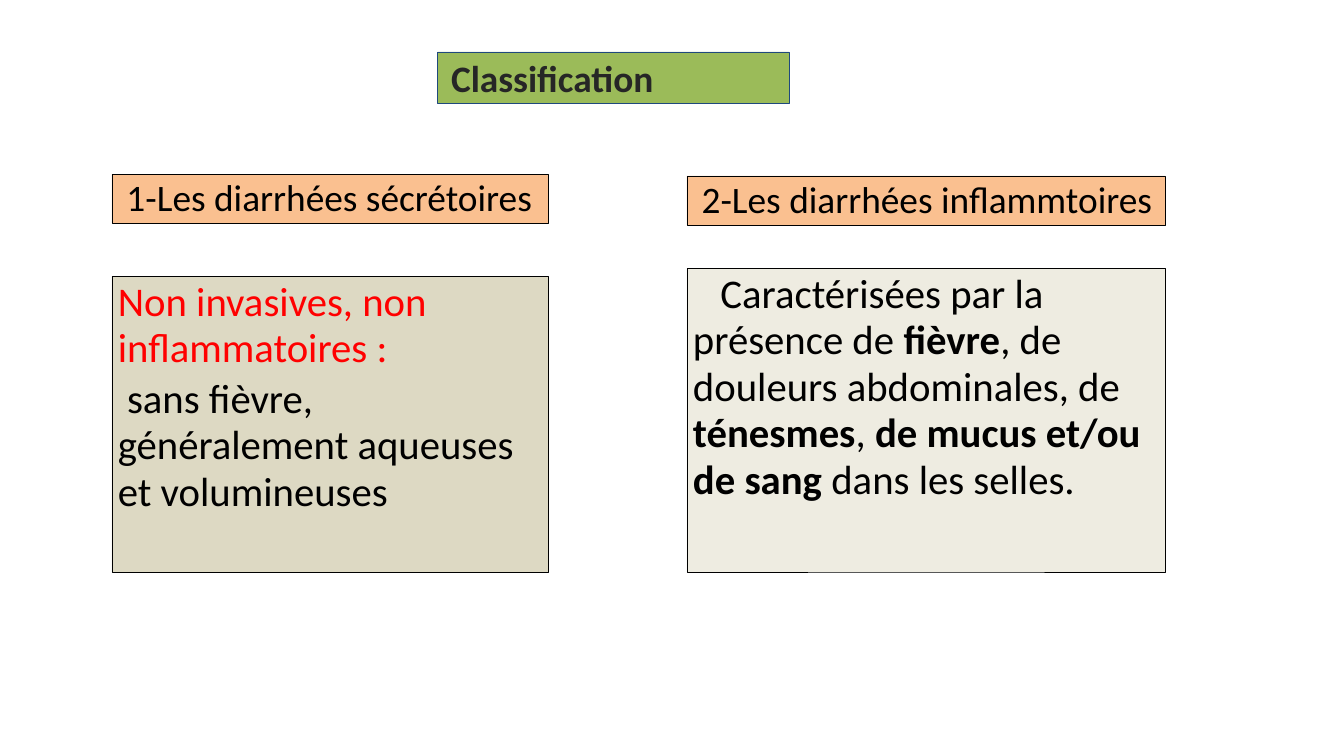
import dataclasses

import pptx
import pptx.dml.color
import pptx.enum.shapes
import pptx.enum.text
import pptx.util

Inches = pptx.util.Inches
Pt = pptx.util.Pt


@dataclasses.dataclass(frozen=True)
class Theme:
    font: str = "Calibri"
    heading_size: int = 44
    body_size: int = 48
    line_width: float = 0.75
    line_spacing: float = 0.95
    paragraph_gap: int = 5
    text: str = "000000"
    alert: str = "FF0000"
    title_text: str = "262626"
    title_fill: str = "9BBB59"
    title_line: str = "1F497D"
    heading_fill: str = "FAC090"
    secretory_fill: str = "DDD9C3"
    inflammatory_fill: str = "EEECE1"


THEME = Theme()


def rgb(value):
    return pptx.dml.color.RGBColor.from_string(value)


def style_box(box, fill, line, inset=0.1):
    """Fill and outline a box, and anchor its text at the top left."""
    box.fill.solid()
    box.fill.fore_color.rgb = rgb(fill)
    box.line.color.rgb = rgb(line)
    box.line.width = Pt(THEME.line_width)
    frame = box.text_frame
    frame.auto_size = pptx.enum.text.MSO_AUTO_SIZE.NONE
    frame.vertical_anchor = pptx.enum.text.MSO_ANCHOR.TOP
    frame.margin_left = Inches(inset)
    frame.margin_right = Inches(0.1)
    frame.margin_top = frame.margin_bottom = Inches(0.05)


def style_run(run, size, color=THEME.text, bold=False):
    run.font.name = THEME.font
    run.font.size = Pt(size)
    run.font.color.rgb = rgb(color)
    run.font.bold = bold


def style_paragraph(paragraph, indent=0):
    paragraph.alignment = pptx.enum.text.PP_ALIGN.LEFT
    paragraph.line_spacing = THEME.line_spacing
    if indent:
        paragraph._p.get_or_add_pPr().set("indent", str(Inches(indent)))


def add_box(slide, left, top, width, height, fill, inset=0.1):
    box = slide.shapes.add_shape(
        pptx.enum.shapes.MSO_SHAPE.RECTANGLE,
        Inches(left), Inches(top), Inches(width), Inches(height))
    box.shadow.inherit = False
    style_box(box, fill, THEME.text, inset)
    return box.text_frame


def set_title(slide, text):
    title = slide.shapes.title
    title.left, title.top = Inches(7.16), Inches(0.85)
    title.width, title.height = Inches(5.75), Inches(0.84)
    style_box(title, THEME.title_fill, THEME.title_line, inset=0.22)
    title.text_frame.text = text
    heading = title.text_frame.paragraphs[0]
    heading.alignment = pptx.enum.text.PP_ALIGN.LEFT
    style_run(heading.runs[0], THEME.heading_size, THEME.title_text, bold=True)


def add_heading(slide, left, top, width, text):
    frame = add_box(slide, left, top, width, 0.8, THEME.heading_fill, inset=0.24)
    frame.word_wrap = False
    frame.text = text
    style_paragraph(frame.paragraphs[0])
    style_run(frame.paragraphs[0].runs[0], THEME.heading_size)


def add_description(slide, left, top, width, height, fill, paragraphs):
    """Each paragraph is (indent, colour, [(text, bold), ...])."""
    frame = add_box(slide, left, top, width, height, fill)
    frame.word_wrap = True
    for index, (indent, color, pieces) in enumerate(paragraphs):
        paragraph = frame.add_paragraph() if index else frame.paragraphs[0]
        style_paragraph(paragraph, indent)
        if index:
            paragraph.space_before = Pt(THEME.paragraph_gap)
        for text, bold in pieces:
            run = paragraph.add_run()
            run.text = text
            style_run(run, THEME.body_size, color, bold)


def main():
    deck = pptx.Presentation()
    deck.slide_width, deck.slide_height = Inches(21.99), Inches(12.37)
    slide = deck.slides.add_slide(deck.slide_layouts[5])
    set_title(slide, "Classification")

    # Secretory diarrhoea, left column
    left, width = 1.83, 7.14
    add_heading(slide, left, 2.85, width, "1-Les diarrhées sécrétoires")
    add_description(slide, left, 4.52, width, 4.85, THEME.secretory_fill, [
        (0, THEME.alert, [("Non invasives, non inflammatoires :", False)]),
        (0.15, THEME.text,
         [("sans fièvre, généralement aqueuses et volumineuses", False)]),
    ])

    # Inflammatory diarrhoea, right column
    left, width = 11.24, 7.82
    add_heading(slide, left, 2.88, width, "2-Les diarrhées inflammtoires")
    add_description(slide, left, 4.39, width, 4.97, THEME.inflammatory_fill, [
        (0.45, THEME.text, [
            ("Caractérisées par la présence de", False),
            (" fièvre", True),
            (", de douleurs abdominales, de ", False),
            ("ténesmes", True),
            (", ", False),
            ("de mucus et/ou de sang ", True),
            ("dans les selles.", False),
        ]),
    ])

    deck.save("out.pptx")


if __name__ == "__main__":
    main()
